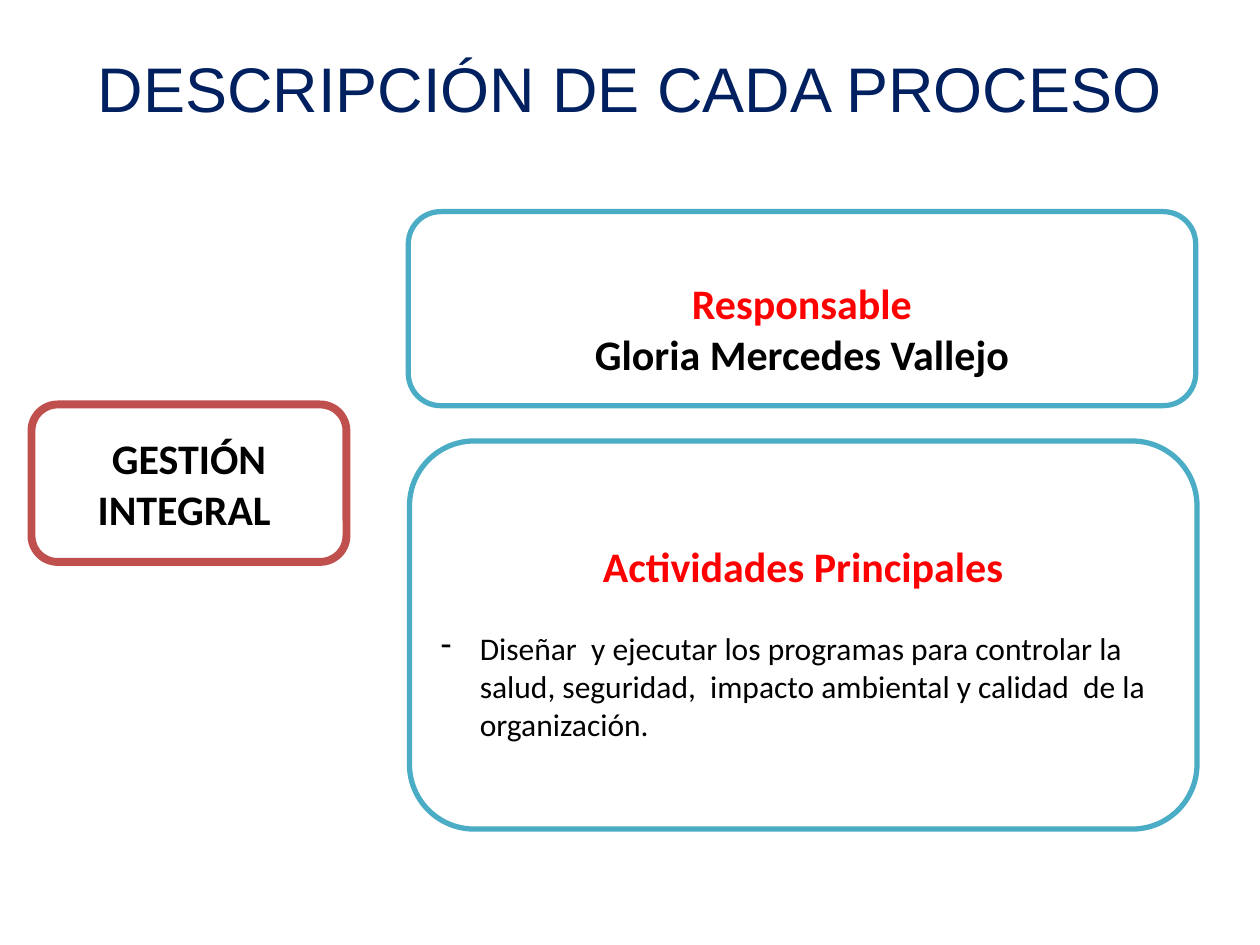
from lxml import etree
from pptx import Presentation
from pptx.dml.color import RGBColor
from pptx.enum import shapes, text
from pptx.oxml.ns import qn
from pptx.util import Inches, Pt

COLORS = {
    "white": "FFFFFF", "black": "000000", "navy": "002060",
    "red": "FF0000", "brick": "C0504D", "teal": "4BACC6",
}


def color(name):
    return RGBColor.from_string(COLORS[name])


def style(para, size, tint, bold, font="Calibri", align=text.PP_ALIGN.CENTER):
    para.alignment = align
    values = {"size": Pt(size), "bold": bold, "name": font}
    for name, value in values.items():
        setattr(para.font, name, value)
    para.font.color.rgb = color(tint)


deck = Presentation()
deck.slide_width, deck.slide_height = Inches(10), Inches(7.5)
page = deck.slides.add_slide(deck.slide_layouts[5])

title = page.shapes.title
title.left, title.top = Inches(0.5), Inches(0.3)
title.width, title.height = Inches(9), Inches(0.78)
title.text_frame.text = "DESCRIPCIÓN DE CADA PROCESO"
title.text_frame.vertical_anchor = text.MSO_ANCHOR.MIDDLE
style(title.text_frame.paragraphs[0], 36, "navy", False, "Arial")

# place, line colour, line width, top and bottom margins, headings
cards = [
    ((0.25, 3.21, 2.5, 1.25), "brick", 4.5, (0.05, 0.05),
     [("GESTIÓN INTEGRAL ", "black")]),
    ((3.24, 1.68, 6.25, 1.54), "teal", 3, (0.36, 0.05),
     [("Responsable", "red"), ("Gloria Mercedes Vallejo", "black")]),
    ((3.25, 3.5, 6.25, 3.08), "teal", 3, (0.46, 0.36),
     [("Actividades Principales", "red")]),
]
for place, outline, weight, (top, bottom), headings in cards:
    card = page.shapes.add_shape(
        shapes.MSO_SHAPE.ROUNDED_RECTANGLE, *map(Inches, place))
    card.shadow.inherit = False
    card.fill.solid()
    card.fill.fore_color.rgb = color("white")
    card.line.color.rgb = color(outline)
    card.line.width = Pt(weight)
    frame = card.text_frame
    frame.word_wrap = True
    frame.vertical_anchor = text.MSO_ANCHOR.MIDDLE
    frame.margin_top, frame.margin_bottom = Inches(top), Inches(bottom)
    frame.text = "\n".join(words for words, _ in headings)
    for para, (_, tint) in zip(frame.paragraphs, headings):
        style(para, 24, tint, True)

# The last card also lists the activity
activity = frame.add_paragraph()
activity.text = ("Diseñar  y ejecutar los programas para controlar la salud, "
                 "seguridad,  impacto ambiental y calidad  de la organización.")
activity.space_before = Pt(22)
properties = activity._p.get_or_add_pPr()
properties.set("marL", str(Inches(0.31)))
properties.set("indent", str(-Inches(0.31)))
etree.SubElement(properties, qn("a:buChar"), char="-")
style(activity, 18, "black", False, align=text.PP_ALIGN.LEFT)

deck.save("out.pptx")
